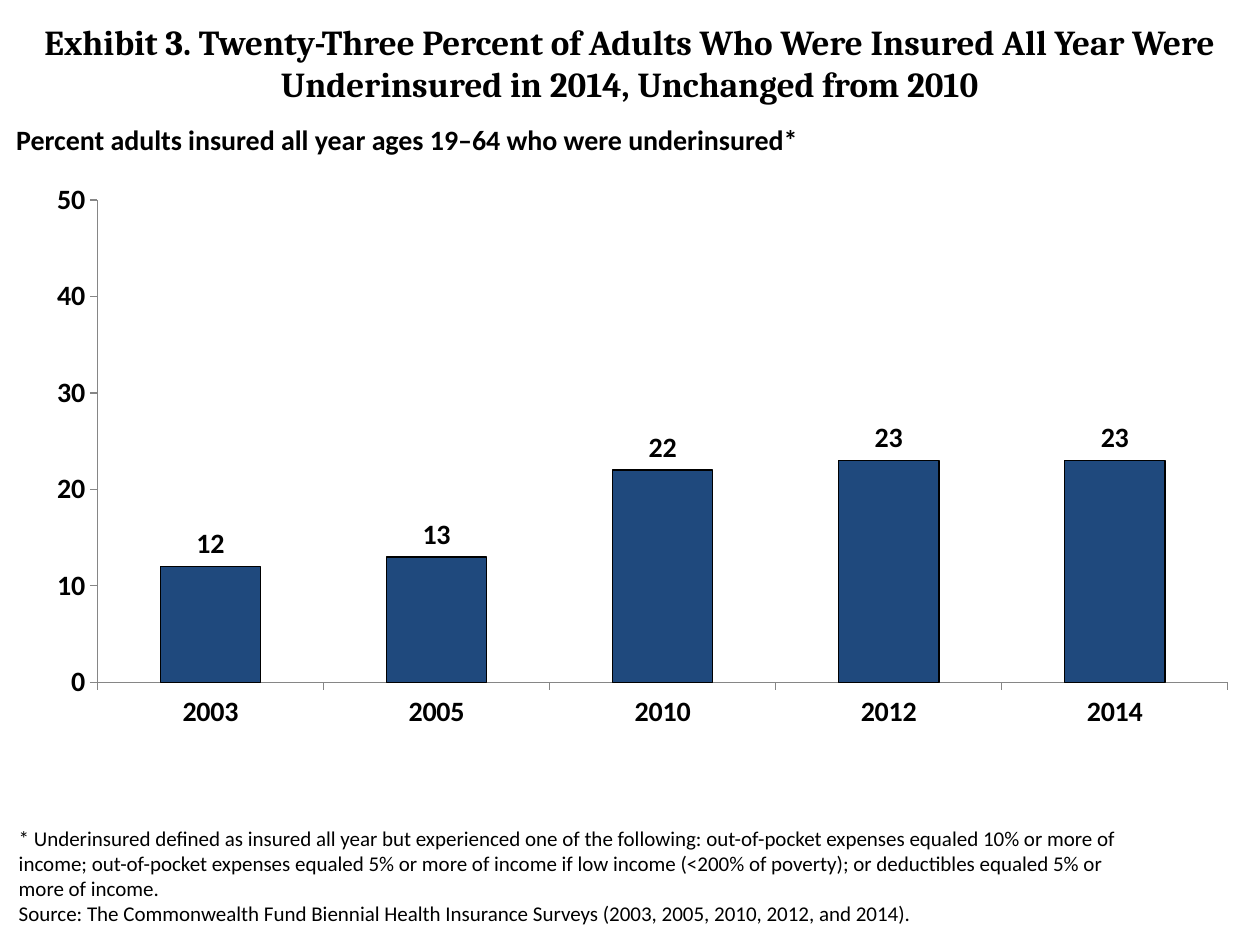
from pptx import Presentation
from pptx.chart.data import CategoryChartData
from pptx.dml.color import RGBColor
from pptx.enum.chart import XL_CHART_TYPE, XL_LABEL_POSITION, XL_TICK_MARK
from pptx.enum.text import MSO_ANCHOR, PP_ALIGN
from pptx.oxml import parse_xml
from pptx.oxml.ns import nsdecls, qn
from pptx.util import Pt


def color(code):
    return RGBColor.from_string(code)


def add_text(box, text, size, face="Calibri", bold=False, align=PP_ALIGN.LEFT):
    shape = slide.shapes.add_textbox(*[Pt(n) for n in box])
    frame = shape.text_frame
    frame.word_wrap = True
    frame.text = text
    for par in frame.paragraphs:
        par.alignment = align
        for run in par.runs:
            run.font.name = face
            run.font.size = Pt(size)
            run.font.bold = bold
            run.font.color.rgb = color("000000")
    return frame


deck = Presentation()
deck.slide_width, deck.slide_height = Pt(720), Pt(540)
slide = deck.slides.add_slide(deck.slide_layouts[6])

# Title
title = add_text(
    (0, 7.2, 720, 57.6),
    "Exhibit 3. Twenty-Three Percent of Adults Who Were Insured All Year Were "
    "Underinsured in 2014, Unchanged from 2010",
    20, "Cambria", True, PP_ALIGN.CENTER)
title.vertical_anchor = MSO_ANCHOR.MIDDLE

# Notes below the chart
add_text(
    (3.6, 468, 656.64, 65.5),
    "* Underinsured defined as insured all year but experienced one of the "
    "following: out-of-pocket expenses equaled 10% or more of income; "
    "out-of-pocket expenses equaled 5% or more of income if low income "
    "(<200% of poverty); or deductibles equaled 5% or more of income.\n"
    "Source: The Commonwealth Fund Biennial Health Insurance Surveys "
    "(2003, 2005, 2010, 2012, and 2014).", 12)

# Chart heading
add_text((2.2, 66.24, 501.84, 26.64),
         "Percent adults insured all year ages 19–64 who were underinsured*",
         16, bold=True)

# Column chart
data = CategoryChartData(number_format="0")
data.categories = ["2003", "2005", "2010", "2012", "2014"]
data.add_series("Series 1", (12, 13, 22, 23, 23))
chart = slide.shapes.add_chart(
    XL_CHART_TYPE.COLUMN_CLUSTERED,
    Pt(12.24), Pt(90), Pt(689.76), Pt(367.2), data).chart
chart.has_title = False
chart.has_legend = False
chart.font.name = "Calibri"
chart.font.size = Pt(16)
chart.font.bold = True
chart.font.color.rgb = color("000000")

# Axes
for axis in (chart.category_axis, chart.value_axis):
    axis.has_major_gridlines = False
    axis.major_tick_mark = XL_TICK_MARK.OUTSIDE
    axis.minor_tick_mark = XL_TICK_MARK.NONE
    axis.format.line.color.rgb = color("868686")
    axis.format.line.width = Pt(0.75)
scale = chart.value_axis
scale.minimum_scale, scale.maximum_scale = 0, 50
scale.major_unit = 10
scale.tick_labels.number_format = "0"
scale.tick_labels.number_format_is_linked = False

# Bars and value labels
plot = chart.plots[0]
plot.gap_width = 125
plot.vary_by_categories = False
bars = plot.series[0].format
bars.fill.solid()
bars.fill.fore_color.rgb = color("1F497D")
bars.line.color.rgb = color("000000")
bars.line.width = Pt(0.75)
plot.has_data_labels = True
labels = plot.data_labels
labels.show_value = True
labels.position = XL_LABEL_POSITION.OUTSIDE_END

# Fixed inner plot area, as fractions of the chart
area = chart.element.find(".//" + qn("c:plotArea"))
for old in area.findall(qn("c:layout")):
    area.remove(old)
sides = (("x", 0.063), ("y", 0.066), ("w", 0.937), ("h", 0.751))
parts = '<c:layoutTarget val="inner"/><c:xMode val="edge"/><c:yMode val="edge"/>'
parts += "".join(f'<c:{side} val="{size}"/>' for side, size in sides)
area.insert(0, parse_xml(
    f'<c:layout {nsdecls("c")}><c:manualLayout>{parts}</c:manualLayout></c:layout>'))

deck.save("out.pptx")
